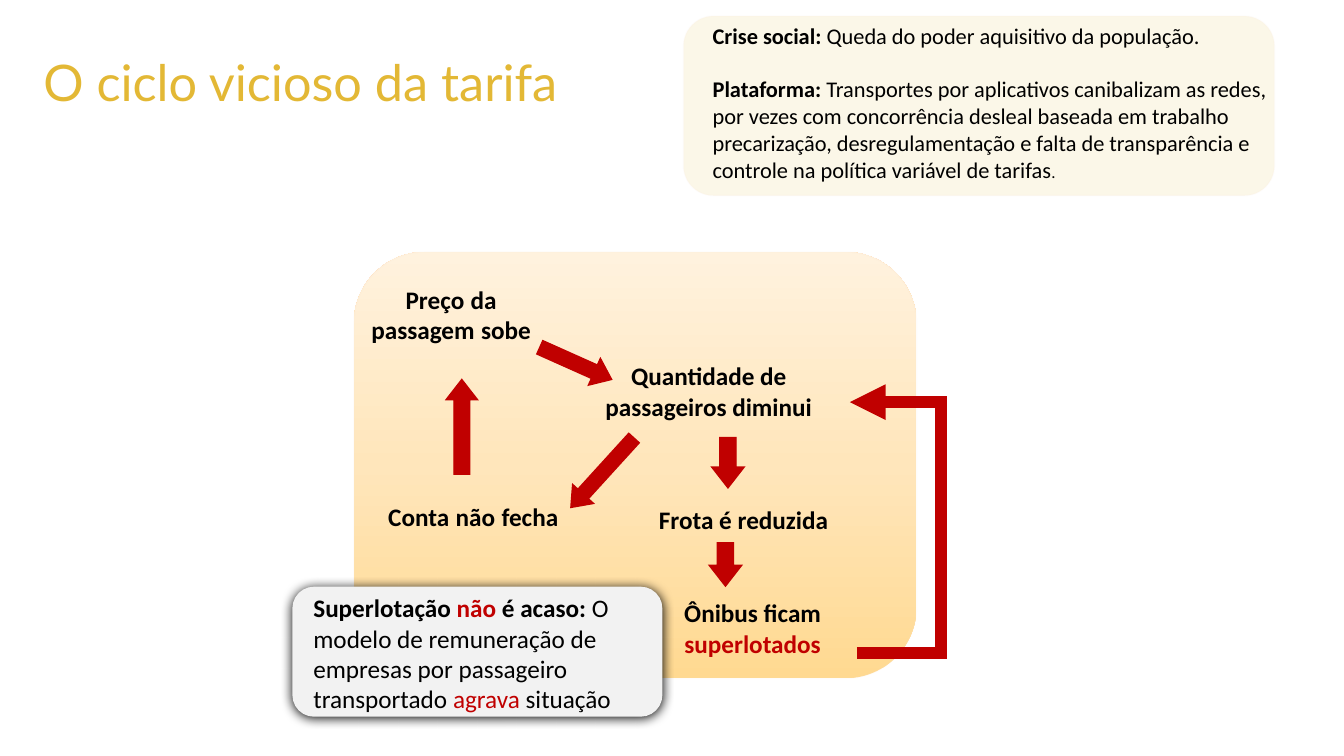
from copy import deepcopy
from pptx import Presentation
from pptx.dml.color import RGBColor
from pptx.enum import shapes as es, text as et
from pptx.oxml import parse_xml
from pptx.oxml.ns import nsdecls, qn
from pptx.util import Inches, Pt

RED, BLACK, GOLD, CREAM = "C00000", "000000", "E3B835", "FBE5D6"
TITLE = "O ciclo vicioso da tarifa"

# Run: (text, bold, colour, size)
# Steps of the cycle: left, top, width, height, runs
STEPS = [
    (3.51, 2.8, 1.93, 0.66, [("Preço", True, BLACK, 18), (" ", True, BLACK, 20),
                             ("da", True, BLACK, 18), (" ", True, BLACK, 20),
                             ("passagem", True, BLACK, 18), (" ", True, BLACK, 20),
                             ("sobe", True, BLACK, 18)]),
    (5.62, 3.53, 2.82, 0.71, [("Quantidade de passageiros diminui", True, BLACK, 18)]),
    (6.31, 5.88, 2.31, 0.71, [("Ônibus ficam ", True, BLACK, 18),
                              ("superlotados", True, RED, 18)]),
    (3.6, 4.9, 2.25, 0.44, [("Conta", True, BLACK, 18), (" ", True, BLACK, 20),
                            ("não", True, BLACK, 18), (" ", True, BLACK, 20),
                            ("fecha", True, BLACK, 18), (" ", True, BLACK, 20)]),
    (6.12, 4.95, 2.51, 0.4, [("Frota é reduzida", True, BLACK, 18)]),
]

# Arrows: left, top, width, height, rotation
ARROWS = [
    (5.32, 3.46, 0.78, 0.29, 24.1),
    (6.97, 4.43, 0.5, 0.32, 90),
    (5.51, 4.55, 0.93, 0.28, 132.3),
    (6.98, 5.44, 0.43, 0.32, 90),
    (4.11, 4.08, 0.94, 0.31, 270),
]
LOOP = (8.5, 6.48, 8.43, 3.99)  # from x, y to x, y
BEND = 9.33

CAUSES = [
    [("Crise social:", True, BLACK, 16),
     (" Queda do poder aquisitivo da população.", False, BLACK, 16)],
    [("Plataforma: ", True, BLACK, 16),
     ("Transportes por aplicativos canibalizam as redes, por vezes com "
      "concorrência desleal baseada em trabalho precarização, "
      "desregulamentação e falta de transparência e controle na política "
      "variável de tarifas", False, BLACK, 16),
     (".", False, BLACK, 12)],
]
NOTE = [
    ("Superlotação ", True, BLACK, 18), ("não", True, RED, 18),
    (" é acaso: ", True, BLACK, 18),
    ("O modelo de remuneração de empresas por passageiro transportado ",
     False, BLACK, 18),
    ("agrava", False, RED, 18), (" situação", False, BLACK, 18),
]

prs = Presentation()
prs.slide_width, prs.slide_height = Inches(13.33), Inches(7.5)
slide = prs.slides.add_slide(prs.slide_layouts[5])


def rgb(code):
    return RGBColor.from_string(code)


def place(box):
    return [Inches(n) for n in box]


def fade(part, share):
    tone = part.find(".//" + qn("a:srgbClr"))
    tone.append(parse_xml(f'<a:alpha {nsdecls("a")} val="{share * 1000}"/>'))


def miter(line):
    line._ln.append(parse_xml(f'<a:miter {nsdecls("a")} lim="800000"/>'))


def add_run(para, words, bold, color, size, face="Calibri"):
    run = para.add_run()
    run.text = words
    font = run.font
    font.name, font.size, font.bold = face, Pt(size), bold
    font.color.rgb = rgb(color)


def add_text(box, paras, align=et.PP_ALIGN.LEFT, gap=0):
    frame = slide.shapes.add_textbox(*place(box)).text_frame
    frame.word_wrap = True
    for i, runs in enumerate(paras):
        para = frame.add_paragraph() if i else frame.paragraphs[0]
        para.alignment = align
        if i:
            para.space_before = Pt(gap)
        for run in runs:
            add_run(para, *run)
    return frame


def add_form(kind, box, fill=None, line=None):
    form = slide.shapes.add_shape(kind, *place(box))
    form.shadow.inherit = False
    if fill:
        form.fill.solid()
        form.fill.fore_color.rgb = rgb(fill)
    if line:
        form.line.color.rgb = rgb(line)
        form.line.width = Pt(1)
        miter(form.line)
    else:
        form.line.fill.background()
    return form


ROUND = es.MSO_SHAPE.ROUNDED_RECTANGLE

# Cycle panel, shaded from bottom to top
panel = add_form(ROUND, (3.51, 2.5, 5.58, 4.23), line=CREAM)
fade(panel.line._ln, 9)
panel.fill.gradient()
panel.fill.gradient_angle = 90
stops = panel._element.spPr.find(".//" + qn("a:gsLst"))
stops.insert(1, deepcopy(stops[0]))
for stop, tone, pos in zip(panel.fill.gradient_stops,
                           ("FFD991", "FFE6BB", "FFF2DE"), (0, 0.5, 1)):
    stop.color.rgb = rgb(tone)
    stop.position = pos

# Title
title = slide.shapes.title
title.left, title.top, title.width, title.height = place((0.33, -0.09, 11.39, 1.87))
title.text_frame.vertical_anchor = et.MSO_ANCHOR.MIDDLE
head = title.text_frame.paragraphs[0]
head.alignment, head.line_spacing = et.PP_ALIGN.LEFT, 0.9
add_run(head, TITLE, False, GOLD, 36, "Lato")

# Steps
frames = [add_text(box, [runs], et.PP_ALIGN.CENTER) for *box, runs in STEPS]
frames[0].vertical_anchor = et.MSO_ANCHOR.MIDDLE
price = frames[0].paragraphs[0]
price.line_spacing, price.space_before = 0.9, Pt(12)

# Arrows between steps
for *box, turn in ARROWS:
    arrow = add_form(es.MSO_SHAPE.RIGHT_ARROW, box, RED, RED)
    arrow.adjustments[1] = 0.642
    arrow.rotation = turn

# Loop back from crowding to fewer passengers
loop = slide.shapes.add_connector(es.MSO_CONNECTOR.ELBOW, *place(LOOP))
loop.line.color.rgb = rgb(RED)
loop.line.width = Pt(8.5)
miter(loop.line)
loop.line._ln.append(parse_xml(f'<a:tailEnd {nsdecls("a")} type="triangle"/>'))
props = loop._element.spPr
props.append(parse_xml(f'<a:effectLst {nsdecls("a")}/>'))
bend = round((BEND - LOOP[0]) / (LOOP[2] - LOOP[0]) * 100000)
guides = props.find(qn("a:prstGeom")).get_or_add_avLst()
guides.append(parse_xml(f'<a:gd {nsdecls("a")} name="adj1" fmla="val {bend}"/>'))

# Causes, top right
cause = add_form(ROUND, (6.78, 0.16, 5.86, 1.78), GOLD, CREAM)
fade(cause._element.spPr.find(qn("a:solidFill")), 11)
fade(cause.line._ln, 9)
add_text((6.97, 0.17, 5.83, 1.72), CAUSES, gap=19)

# Note with soft shadow
card = add_form(ROUND, (2.9, 5.82, 3.67, 1.29), "F2F2F2")
card._element.spPr.find(qn("a:effectLst")).append(parse_xml(
    f'<a:outerShdw {nsdecls("a")} blurRad="{Pt(8.5)}" dist="{Pt(1)}" dir="5400000">'
    f'<a:srgbClr val="{BLACK}"/></a:outerShdw>'))
add_text((3.01, 5.83, 3.56, 1.31), [NOTE])

prs.save("out.pptx")
